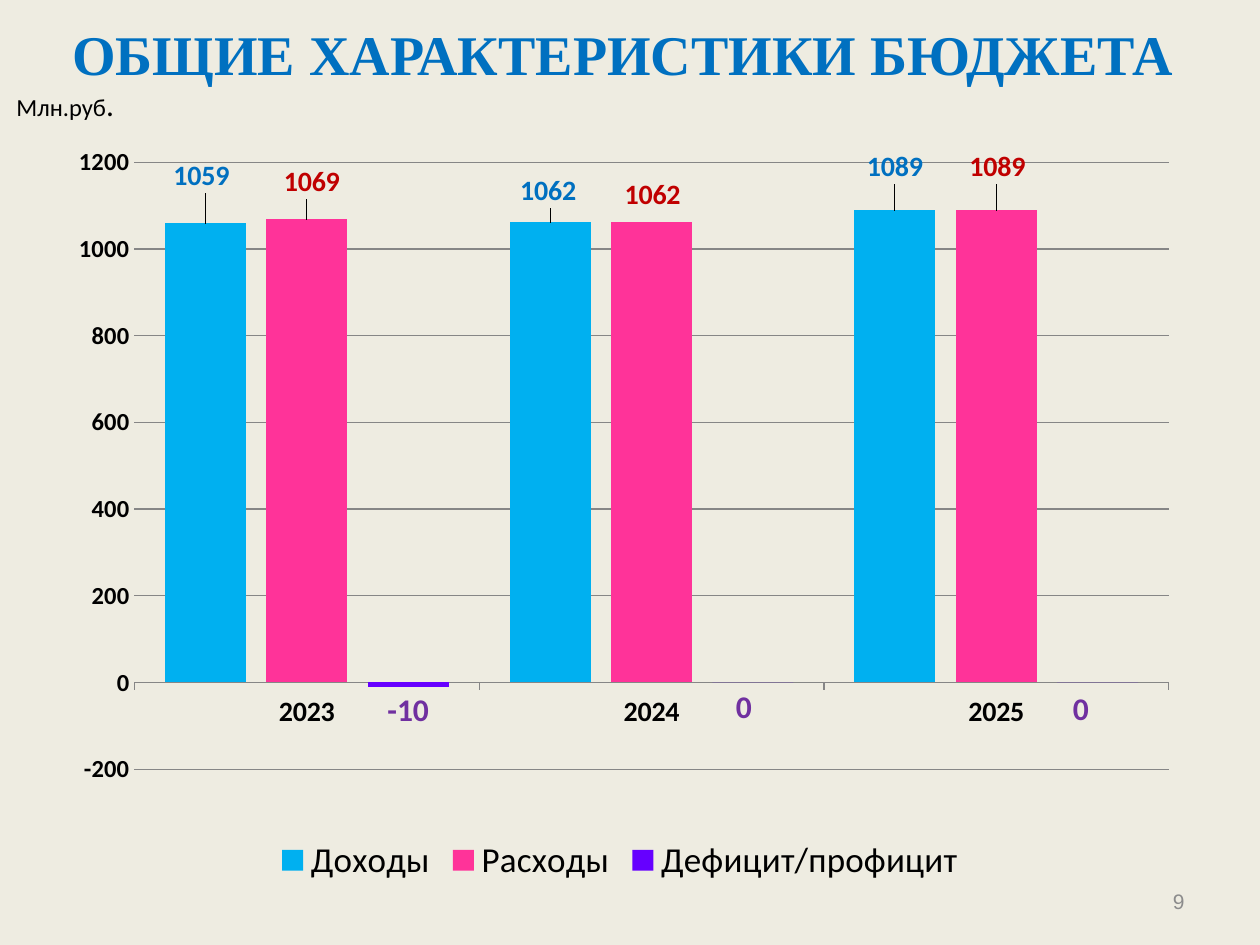
from dataclasses import dataclass
from typing import Any

from lxml.etree import Element, SubElement
from pptx import Presentation
from pptx.chart.data import CategoryChartData
from pptx.dml.color import RGBColor
from pptx.enum.chart import XL_CHART_TYPE, XL_LABEL_POSITION, XL_LEGEND_POSITION, XL_TICK_MARK
from pptx.enum.text import MSO_ANCHOR, MSO_AUTO_SIZE, PP_ALIGN
from pptx.oxml.ns import qn
from pptx.util import Emu, Pt

BACKGROUND = RGBColor(0xEE, 0xEC, 0xE1)
BLACK = RGBColor(0x00, 0x00, 0x00)
GRAY = RGBColor(0x8C, 0x8C, 0x8C)
GRID = RGBColor(0x86, 0x86, 0x86)
BLUE = RGBColor(0x00, 0x70, 0xC0)
SKY = RGBColor(0x00, 0xB0, 0xF0)
PINK = RGBColor(0xFF, 0x33, 0x99)
RED = RGBColor(0xC0, 0x00, 0x00)
VIOLET = RGBColor(0x66, 0x00, 0xFF)
PURPLE = RGBColor(0x70, 0x30, 0xA0)

PIXELS_PER_INCH = 126
CHART_BOX = (35, 136, 1170, 753)
PLOT_AREA = {"x": 0.085, "y": 0.035, "w": 0.884, "h": 0.806}
YEARS = ("2023", "2024", "2025")


@dataclass(frozen=True)
class BudgetSeries:
    name: str
    values: tuple[int, ...]
    fill: RGBColor
    label_color: RGBColor
    label_size: int
    label_shifts: dict[int, tuple[int, int]]


@dataclass(frozen=True)
class TextRun:
    text: str
    size: int
    font: str
    color: RGBColor
    bold: bool = False


BUDGET = (
    BudgetSeries("Доходы", (1059, 1062, 1089), SKY, BLUE, 16, {0: (-4, -25), 1: (-2, -9), 2: (0, -21)}),
    BudgetSeries("Расходы", (1069, 1062, 1089), PINK, RED, 16, {0: (5, -15), 1: (1, -5), 2: (1, -21)}),
    BudgetSeries("Дефицит/профицит", (-10, 0, 0), VIOLET, PURPLE, 18, {1: (-9, 49), 2: (-17, 51)}),
)


def px(length: int) -> Emu:
    """Turn pixels into EMU."""
    return Emu(round(length * 914400 / PIXELS_PER_INCH))


def style_font(font: Any, size: int, color: RGBColor, bold: bool = False, name: str = "Calibri") -> None:
    """Set the face, size, colour and weight of a font."""
    font.name, font.size, font.bold = name, Pt(size), bold
    font.color.rgb = color


def place(shape: Any, box: tuple[int, int, int, int]) -> None:
    """Move and size a shape in pixels."""
    shape.left, shape.top, shape.width, shape.height = map(px, box)


def write_runs(shape: Any, runs: tuple[TextRun, ...], alignment: PP_ALIGN) -> None:
    """Write one paragraph run by run."""
    paragraph = shape.text_frame.paragraphs[0]
    paragraph.alignment = alignment
    for item in runs:
        run = paragraph.add_run()
        run.text = item.text
        style_font(run.font, item.size, item.color, item.bold, item.font)


def manual_layout(values: dict[str, float], inner: bool = False) -> Any:
    """Build a manual chart layout element."""
    layout = Element(qn("c:layout"))
    manual = SubElement(layout, qn("c:manualLayout"))
    if inner:
        SubElement(manual, qn("c:layoutTarget")).set("val", "inner")
        for mode in ("xMode", "yMode"):
            SubElement(manual, qn(f"c:{mode}")).set("val", "edge")
    for key, value in values.items():
        SubElement(manual, qn(f"c:{key}")).set("val", str(value))
    return layout


def style_series(series: Any, budget: BudgetSeries) -> None:
    """Colour a series and place its value labels."""
    series.format.fill.solid()
    series.format.fill.fore_color.rgb = budget.fill
    series.invert_if_negative = False
    labels = series.data_labels
    labels.show_value = True
    labels.position = XL_LABEL_POSITION.OUTSIDE_END
    style_font(labels.font, budget.label_size, budget.label_color, True)
    for index in budget.label_shifts:
        label = series.points[index].data_label
        style_font(label.font, budget.label_size, budget.label_color, True)
        label.position = XL_LABEL_POSITION.OUTSIDE_END
    for element in series._element.iter(qn("c:dLbl")):
        across, down = budget.label_shifts[int(element.find(qn("c:idx")).get("val"))]
        shift = {"x": round(across / CHART_BOX[2], 4), "y": round(down / CHART_BOX[3], 4)}
        element.insert(1, manual_layout(shift))


def style_axes(chart: Any) -> None:
    """Format both axes and the gridlines."""
    years, amounts = chart.category_axis, chart.value_axis
    style_font(years.tick_labels.font, 16, BLACK, True)
    years.major_tick_mark = XL_TICK_MARK.OUTSIDE
    years.format.line.color.rgb = GRID
    style_font(amounts.tick_labels.font, 14, BLACK, True)
    amounts.major_tick_mark = XL_TICK_MARK.NONE
    amounts.minimum_scale, amounts.maximum_scale, amounts.major_unit = -200, 1200, 200
    amounts.format.line.fill.background()
    amounts.has_major_gridlines = True
    amounts.major_gridlines.format.line.color.rgb = GRID


def add_budget_chart(slide: Any) -> None:
    """Add the clustered column chart of the budget."""
    data = CategoryChartData()
    data.categories = YEARS
    for budget in BUDGET:
        data.add_series(budget.name, budget.values)
    chart = slide.shapes.add_chart(XL_CHART_TYPE.COLUMN_CLUSTERED, *map(px, CHART_BOX), data).chart
    style_font(chart.font, 10, BLACK)
    chart.has_title = False
    chart.has_legend = True
    chart.legend.position = XL_LEGEND_POSITION.BOTTOM
    chart.legend.include_in_layout = False
    style_font(chart.legend.font, 20, BLACK)
    plot = chart.plots[0]
    plot.gap_width, plot.overlap, plot.vary_by_categories = 75, -25, False
    for series, budget in zip(plot.series, BUDGET):
        style_series(series, budget)
    style_axes(chart)
    plot_area = chart._chartSpace.find(f".//{qn('c:plotArea')}")
    for layout in plot_area.findall(qn("c:layout")):
        plot_area.remove(layout)
    plot_area.insert(0, manual_layout(PLOT_AREA, inner=True))


def main() -> None:
    """Build and save the budget slide."""
    presentation = Presentation()
    presentation.slide_width, presentation.slide_height = px(1260), px(945)
    slide = presentation.slides.add_slide(presentation.slide_layouts[5])
    slide.background.fill.solid()
    slide.background.fill.fore_color.rgb = BACKGROUND

    title = slide.shapes.title
    place(title, (0, 0, 1260, 106))
    title.text_frame.vertical_anchor = MSO_ANCHOR.MIDDLE
    heading = TextRun("ОБЩИЕ ХАРАКТЕРИСТИКИ БЮДЖЕТА ", 32, "Times New Roman", BLUE, True)
    write_runs(title, (heading,), PP_ALIGN.CENTER)

    page_number = slide.shapes.add_textbox(*map(px, (1137, 876, 60, 50)))
    page_number.text_frame.word_wrap = True
    page_number.text_frame.vertical_anchor = MSO_ANCHOR.MIDDLE
    write_runs(page_number, (TextRun("9", 12, "Arial", GRAY),), PP_ALIGN.RIGHT)

    add_budget_chart(slide)

    unit = slide.shapes.add_textbox(*map(px, (4, 79, 123, 50)))
    unit.text_frame.word_wrap = False
    unit.text_frame.auto_size = MSO_AUTO_SIZE.SHAPE_TO_FIT_TEXT
    unit_runs = (TextRun("Млн.руб", 14, "Calibri", BLACK), TextRun(".", 18, "Calibri", BLACK))
    write_runs(unit, unit_runs, PP_ALIGN.LEFT)

    presentation.save("out.pptx")


if __name__ == "__main__":
    main()
